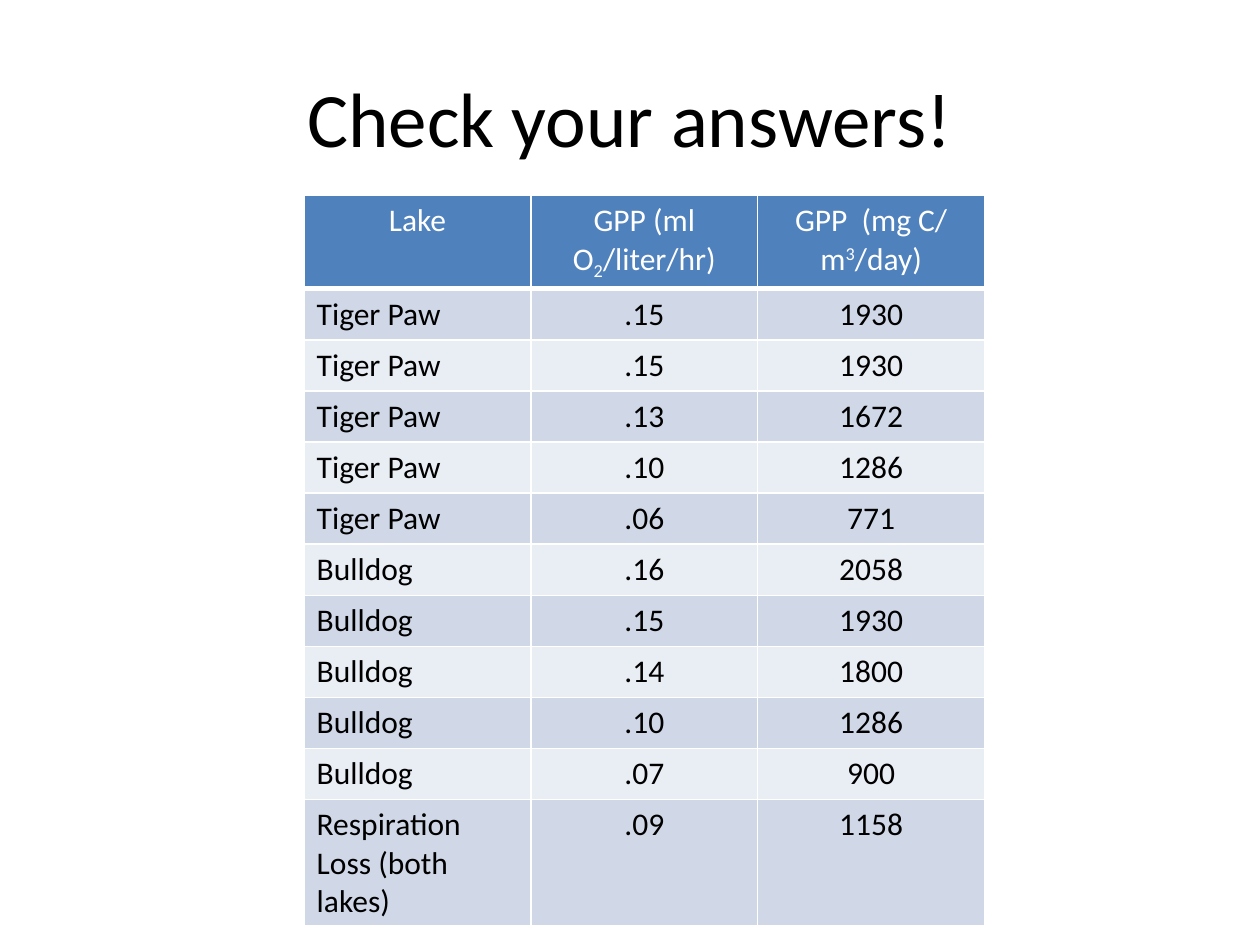
import pptx
import pptx.dml.color
import pptx.enum.text
import pptx.oxml
import pptx.oxml.ns
import pptx.util
from pptx.util import Pt

RGBColor = pptx.dml.color.RGBColor
PP_ALIGN = pptx.enum.text.PP_ALIGN

BLACK = RGBColor(0x00, 0x00, 0x00)
WHITE = RGBColor(0xFF, 0xFF, 0xFF)
HEADER_BLUE = RGBColor(0x4F, 0x81, 0xBD)
BAND_DARK = RGBColor(0xD0, 0xD8, 0xE8)
BAND_LIGHT = RGBColor(0xE9, 0xED, 0xF4)

# Each header is a list of (text, baseline shift in 1/1000 percent)
HEADERS = [
    [("Lake", 0)],
    [("GPP (ml O", 0), ("2", -25000), ("/liter/hr)", 0)],
    [("GPP  (mg C/ m", 0), ("3", 30000), ("/day)", 0)],
]
RESULTS = [
    ("Tiger Paw", ".15", "1930"),
    ("Tiger Paw", ".15", "1930"),
    ("Tiger Paw", ".13", "1672"),
    ("Tiger Paw", ".10", "1286"),
    ("Tiger Paw", ".06", "771"),
    ("Bulldog", ".16", "2058"),
    ("Bulldog", ".15", "1930"),
    ("Bulldog", ".14", "1800"),
    ("Bulldog", ".10", "1286"),
    ("Bulldog", ".07", "900"),
    ("Respiration Loss (both lakes)", ".09", "1158"),
]


def format_run(r, size, color):
    r.font.name = "Calibri"
    r.font.size = Pt(size)
    r.font.bold = False
    r.font.color.rgb = color


def add_border(cell, side, width):
    cell._tc.get_or_add_tcPr().append(pptx.oxml.parse_xml(
        f'<a:ln{side} {pptx.oxml.ns.nsdecls("a")} w="{Pt(width)}">'
        f'<a:solidFill><a:srgbClr val="{WHITE}"/></a:solidFill></a:ln{side}>'))


prs = pptx.Presentation()
prs.slide_width, prs.slide_height = Pt(720), Pt(540)
s = prs.slides.add_slide(prs.slide_layouts[6])

# Title
sp = s.shapes.add_textbox(Pt(36), Pt(21.6), Pt(648), Pt(90))
tf = sp.text_frame
tf.word_wrap = True
tf.vertical_anchor = pptx.enum.text.MSO_ANCHOR.MIDDLE
p = tf.paragraphs[0]
p.text = "Check your answers!"
p.alignment = PP_ALIGN.CENTER
format_run(p.runs[0], 44, BLACK)

# Table grid
rows = [HEADERS] + [[[(text, 0)] for text in row] for row in RESULTS]
table = s.shapes.add_table(len(rows), 3, Pt(173.8), Pt(111.6),
                           Pt(388.8), Pt(29.2 * len(rows))).table
for column in table.columns:
    column.width = Pt(129.6)
for row in table.rows:
    row.height = Pt(29.2)

# Cell text, borders and banded fills
for i, row in enumerate(rows):
    header = i == 0
    fill = HEADER_BLUE if header else BAND_DARK if i % 2 else BAND_LIGHT
    for j, parts in enumerate(row):
        cell = table.cell(i, j)
        p = cell.text_frame.paragraphs[0]
        p.alignment = PP_ALIGN.CENTER if header or j else PP_ALIGN.LEFT
        for text, baseline in parts:
            r = p.add_run()
            r.text = text
            format_run(r, 18, WHITE if header else BLACK)
            if baseline:
                r.font._element.set("baseline", str(baseline))
        for side in "LRTB":
            add_border(cell, side, 3 if header and side == "B" else 1)
        cell.fill.solid()
        cell.fill.fore_color.rgb = fill

prs.save("out.pptx")
